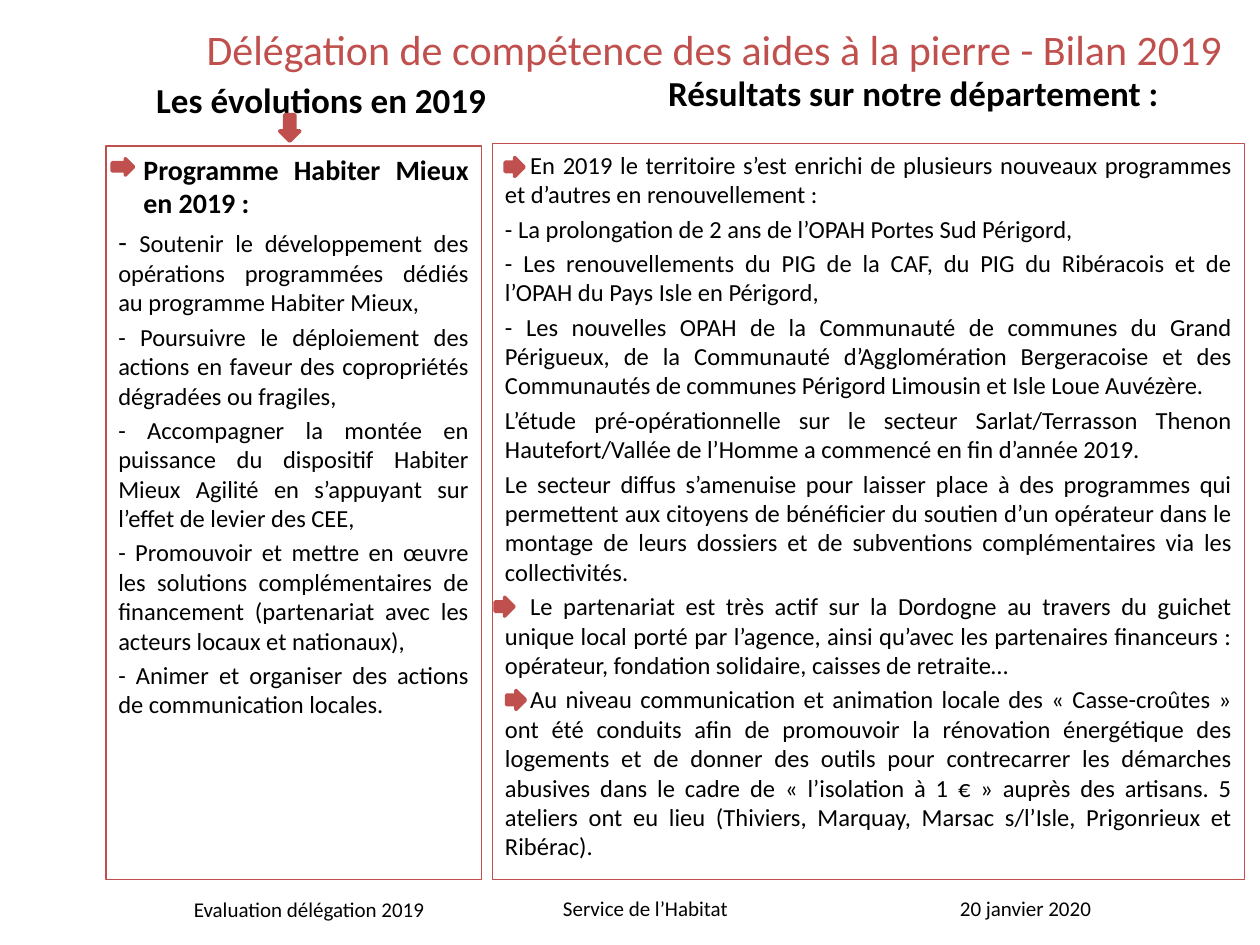
from dataclasses import dataclass

from pptx import Presentation
from pptx.dml.color import RGBColor
from pptx.enum.shapes import MSO_SHAPE
from pptx.enum.text import MSO_ANCHOR, PP_ALIGN
from pptx.util import Inches, Pt

RECTANGLE = MSO_SHAPE.RECTANGLE
DOWN_ARROW = MSO_SHAPE.DOWN_ARROW
RIGHT_ARROW = MSO_SHAPE.RIGHT_ARROW
TOP, MIDDLE = MSO_ANCHOR.TOP, MSO_ANCHOR.MIDDLE
LEFT, CENTER, JUSTIFY = PP_ALIGN.LEFT, PP_ALIGN.CENTER, PP_ALIGN.JUSTIFY


@dataclass(frozen=True)
class Theme:
    font: str = "Calibri"
    accent: RGBColor = RGBColor(0xC0, 0x50, 0x4D)
    text: RGBColor = RGBColor(0, 0, 0)
    title: int = 24
    heading: int = 20
    lead: int = 16
    body: int = 14
    footer: int = 12
    spacing: float = 0.2
    indent: float = 0.2


THEME = Theme()

EVOLUTIONS_LEAD = "Programme Habiter Mieux en 2019 :"
EVOLUTIONS = [
    "Soutenir le développement des opérations programmées dédiés au programme Habiter Mieux,",
    "Poursuivre le déploiement des actions en faveur des copropriétés dégradées ou fragiles,",
    "Accompagner la montée en puissance du dispositif Habiter Mieux Agilité en s’appuyant sur "
    "l’effet de levier des CEE,",
    "Promouvoir et mettre en œuvre les solutions complémentaires de financement (partenariat "
    "avec les acteurs locaux et nationaux),",
    "Animer et organiser des actions de communication locales.",
]

# Each result: (text, whether an arrow marks its indented first line)
RESULTS = [
    ("En 2019 le territoire s’est enrichi de plusieurs nouveaux programmes et d’autres en "
     "renouvellement :", True),
    ("- La prolongation de 2 ans de l’OPAH Portes Sud Périgord,", False),
    ("- Les renouvellements du PIG de la CAF, du PIG du Ribéracois et de l’OPAH du Pays Isle "
     "en Périgord,", False),
    ("- Les nouvelles OPAH de la Communauté de communes du Grand Périgueux, de la Communauté "
     "d’Agglomération Bergeracoise et des Communautés de communes Périgord Limousin et Isle "
     "Loue Auvézère.", False),
    ("L’étude pré-opérationnelle sur le secteur Sarlat/Terrasson Thenon Hautefort/Vallée de "
     "l’Homme a commencé en fin d’année 2019.", False),
    ("Le secteur diffus s’amenuise pour laisser place à des programmes qui permettent aux "
     "citoyens de bénéficier du soutien d’un opérateur dans le montage de leurs dossiers et de "
     "subventions complémentaires via les collectivités.", False),
    ("Le partenariat est très actif sur la Dordogne au travers du guichet unique local porté par "
     "l’agence, ainsi qu’avec les partenaires financeurs : opérateur, fondation solidaire, "
     "caisses de retraite…", True),
    ("Au niveau communication et animation locale des « Casse-croûtes » ont été conduits afin "
     "de promouvoir la rénovation énergétique des logements et de donner des outils pour "
     "contrecarrer les démarches abusives dans le cadre de « l’isolation à 1 € » auprès des "
     "artisans. 5 ateliers ont eu lieu (Thiviers, Marquay, Marsac s/l’Isle, Prigonrieux et "
     "Ribérac).", True),
]

FOOTERS = [
    ("Evaluation délégation 2019", 1.44, 7.07, 2.6),
    ("Service de l’Habitat", 4.37, 7.06, 2.84),
    ("20 janvier 2020", 7.52, 7.06, 1.58),
]

ARROWS = [
    (DOWN_ARROW, 2.22, 0.91, 0.16, 0.21),
    (RIGHT_ARROW, 0.89, 1.26, 0.17, 0.13),
    (RIGHT_ARROW, 4.01, 1.25, 0.15, 0.15),
    (RIGHT_ARROW, 3.93, 4.74, 0.15, 0.15),
    (RIGHT_ARROW, 4.02, 5.48, 0.15, 0.15),
]


def format_run(run, size, bold=False, color=THEME.text):
    run.font.name = THEME.font
    run.font.size = Pt(size)
    run.font.bold = bold
    run.font.color.rgb = color


def add_label(page, text, bounds, size, bold=False, align=LEFT, anchor=TOP):
    box = page.shapes.add_textbox(*map(Inches, bounds))
    box.text_frame.word_wrap = True
    box.text_frame.vertical_anchor = anchor
    box.text_frame.text = text
    para = box.text_frame.paragraphs[0]
    para.alignment = align
    format_run(para.runs[0], size, bold)


def add_title(page, text):
    title = page.shapes.title
    title.left, title.top, title.width, title.height = map(Inches, (1.54, 0.07, 8.35, 0.63))
    title.text_frame.text = text
    title.text_frame.vertical_anchor = MIDDLE
    para = title.text_frame.paragraphs[0]
    para.alignment = LEFT
    format_run(para.runs[0], THEME.title, color=THEME.accent)


def add_panel(page, bounds, texts):
    """Add an outlined box of justified paragraphs and return the paragraphs."""
    panel = page.shapes.add_shape(RECTANGLE, *map(Inches, bounds))
    panel.shadow.inherit = False
    panel.fill.background()
    panel.line.color.rgb = THEME.accent
    panel.line.width = Pt(0.75)
    frame = panel.text_frame
    frame.word_wrap = True
    frame.vertical_anchor = TOP
    frame.text = "\n".join(texts)
    for index, para in enumerate(frame.paragraphs):
        para.alignment = JUSTIFY
        if index:
            para.space_before = Pt(THEME.body * THEME.spacing)
        format_run(para.runs[0], THEME.body)
    return frame.paragraphs


def add_evolutions(page):
    texts = [EVOLUTIONS_LEAD, "- "] + [f"- {text}" for text in EVOLUTIONS[1:]]
    lead, first, *_ = add_panel(page, (0.84, 1.16, 2.98, 5.82), texts)
    lead._p.get_or_add_pPr().set("marL", str(Inches(THEME.indent)))
    format_run(lead.runs[0], THEME.lead, bold=True)
    format_run(first.runs[0], THEME.lead)
    span = first.add_run()
    span.text = EVOLUTIONS[0]
    format_run(span, THEME.body)


def add_results(page):
    paras = add_panel(page, (3.91, 1.14, 5.97, 5.84), [text for text, _ in RESULTS])
    for para, (_, marked) in zip(paras, RESULTS):
        if marked:
            para._p.get_or_add_pPr().set("indent", str(Inches(THEME.indent)))


def add_arrow(page, kind, *bounds):
    arrow = page.shapes.add_shape(kind, *map(Inches, bounds))
    arrow.shadow.inherit = False
    arrow.fill.solid()
    arrow.fill.fore_color.rgb = THEME.accent
    arrow.line.color.rgb = THEME.accent
    arrow.line.width = Pt(2)


def main():
    deck = Presentation()
    deck.slide_width, deck.slide_height = Inches(10), Inches(7.5)
    page = deck.slides.add_slide(deck.slide_layouts[5])

    add_title(page, "Délégation de compétence des aides à la pierre - Bilan 2019")
    for text, left, top, width in FOOTERS:
        add_label(page, text, (left, top, width, 0.3), THEME.footer)
    add_label(page, "Les évolutions en 2019", (0.58, 0.57, 3.94, 0.47),
              THEME.heading, bold=True, align=CENTER)
    add_evolutions(page)
    add_label(page, "Résultats sur notre département :", (4.61, 0.44, 5.28, 0.58),
              THEME.heading, bold=True, align=CENTER, anchor=MIDDLE)
    add_results(page)
    for arrow in ARROWS:
        add_arrow(page, *arrow)

    deck.save("out.pptx")


if __name__ == "__main__":
    main()
